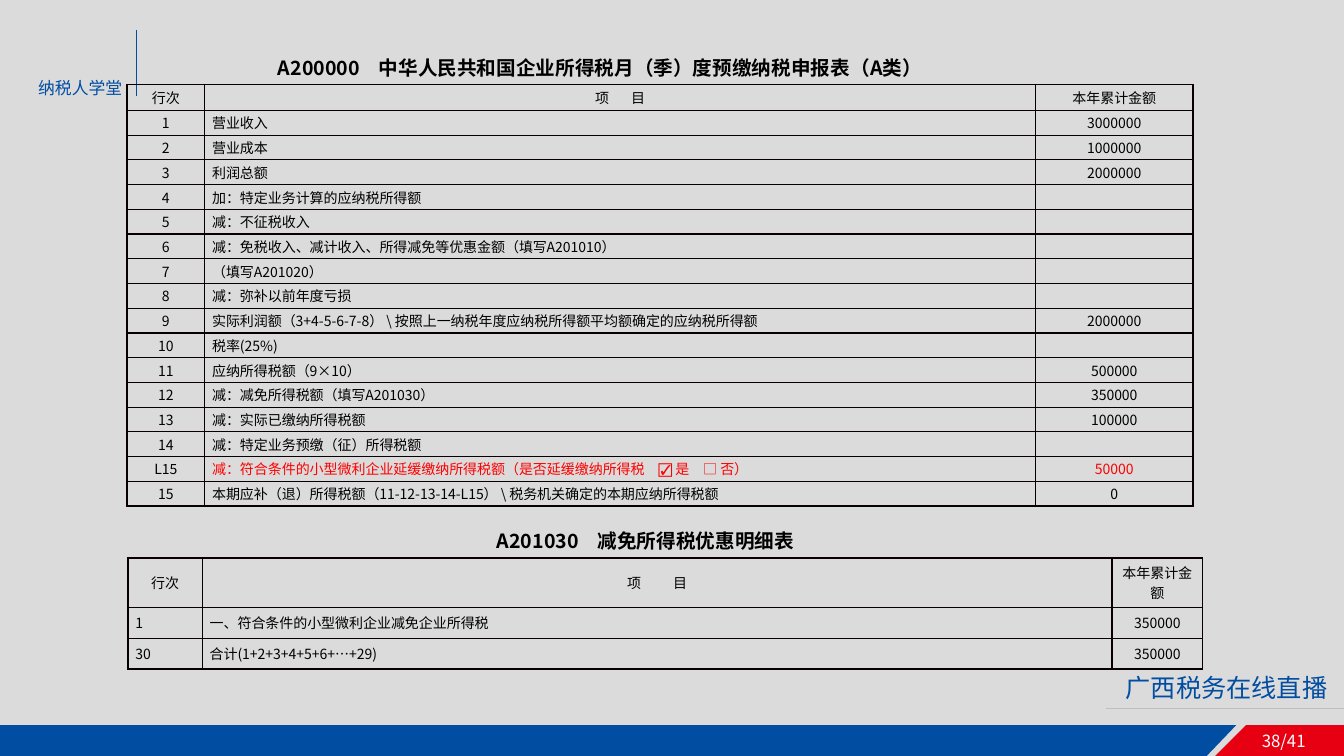
import pptx
import pptx.util
import pptx.dml.color
import pptx.enum.text
import lxml.etree

Pt = pptx.util.Pt
FONT = "Noto Sans CJK SC"
NS = "http://schemas.openxmlformats.org/drawingml/2006/main"
COLORS = {"bg": "DBDBDB", "blue": "004DA1", "red": "E60012", "white": "FFFFFF",
          "rule": "BFBFBF", "black": "000000", "border": "080000", "alert": "FF0000"}
RETURN_ROWS = [
    ("1", "营业收入", "3000000"),
    ("2", "营业成本", "1000000"),
    ("3", "利润总额", "2000000"),
    ("4", "加：特定业务计算的应纳税所得额", ""),
    ("5", "减：不征税收入", ""),
    ("6", "减：免税收入、减计收入、所得减免等优惠金额（填写A201010）", ""),
    ("7", "（填写A201020）", ""),
    ("8", "减：弥补以前年度亏损", ""),
    ("9", "实际利润额（3+4-5-6-7-8） \\ 按照上一纳税年度应纳税所得额平均额确定的应纳税所得额", "2000000"),
    ("10", "税率(25%)", ""),
    ("11", "应纳所得税额（9×10）", "500000"),
    ("12", "减：减免所得税额（填写A201030）", "350000"),
    ("13", "减：实际已缴纳所得税额", "100000"),
    ("14", "减：特定业务预缴（征）所得税额", ""),
    ("L15", [("减：符合条件的小型微利企业延缓缴纳所得税额（是否延缓缴纳所得税　", FONT),
             ("☑", "Arial"), (" 是　□ 否）", FONT)], "50000"),
    ("15", "本期应补（退）所得税额（11-12-13-14-L15） \\ 税务机关确定的本期应纳所得税额", "0"),
]
RELIEF_ROWS = [
    ("1", "一、符合条件的小型微利企业减免企业所得税", "350000"),
    ("30", "合计(1+2+3+4+5+6+…+29)", "350000"),
]


def rgb(name):
    """Return the named colour."""
    return pptx.dml.color.RGBColor.from_string(COLORS[name])


def add_run(p, text, size, color, bold=False, font=FONT, spacing=0):
    """Add one formatted run to a paragraph."""
    r = p.add_run()
    r.text = text
    r.font.size = Pt(size)
    r.font.bold = bold
    r.font.name = font
    r.font.color.rgb = rgb(color)
    rPr = r._r.get_or_add_rPr()
    lxml.etree.SubElement(rPr, f"{{{NS}}}ea", typeface=font)
    if spacing:
        rPr.set("spc", str(round(spacing * 100)))


def add_text(s, x, y, w, h, text, size, color, bold=False):
    """Add a one-line text box."""
    tf = s.shapes.add_textbox(Pt(x), Pt(y), Pt(w), Pt(h)).text_frame
    tf.word_wrap = True
    add_run(tf.paragraphs[0], text, size, color, bold)


def add_band(s, points, color):
    """Add a filled outline through the points."""
    fb = s.shapes.build_freeform(*points[0], scale=Pt(1))
    fb.add_line_segments(points[1:], close=True)
    sp = fb.convert_to_shape()
    sp.shadow.inherit = False
    sp.fill.solid()
    sp.fill.fore_color.rgb = rgb(color)
    sp.line.fill.background()


def add_line(s, x1, y1, x2, y2, color):
    """Add a thin straight line."""
    cx = s.shapes.add_connector(1, Pt(x1), Pt(y1), Pt(x2), Pt(y2))
    cx.line.color.rgb = rgb(color)
    cx.line.width = Pt(0.5)
    lxml.etree.SubElement(cx._element.spPr, f"{{{NS}}}effectLst")


def set_borders(cell, widths):
    """Draw the left, right, top and bottom borders of a cell."""
    tcPr = cell._tc.get_or_add_tcPr()
    for i, (side, width) in enumerate(zip("LRTB", widths)):
        ln = lxml.etree.Element(f"{{{NS}}}ln{side}", w=str(Pt(width)))
        fill = lxml.etree.SubElement(ln, f"{{{NS}}}solidFill")
        lxml.etree.SubElement(fill, f"{{{NS}}}srgbClr", val=COLORS["border"])
        tcPr.insert(i, ln)


def fill_cell(cell, content, centered, color):
    """Write a cell's text, given as a string or as text and font pairs."""
    cell.margin_left = cell.margin_right = Pt(5.4)
    cell.margin_top = cell.margin_bottom = Pt(0)
    cell.vertical_anchor = pptx.enum.text.MSO_ANCHOR.MIDDLE
    cell.fill.background()
    p = cell.text_frame.paragraphs[0]
    if centered:
        p.alignment = pptx.enum.text.PP_ALIGN.CENTER
    if not content:
        p._p.get_or_add_endParaRPr().set("sz", "1000")
        return
    pairs = [(content, FONT)] if isinstance(content, str) else content
    for text, font in pairs:
        add_run(p, text, 10, color, font=font)


def add_form(s, x, y, widths, heights, rows, gap, top, center_first):
    """Add a tax form table with a heavier outer frame."""
    rows = [("行次", "", "本年累计金额")] + rows
    table = s.shapes.add_table(len(rows), 3, Pt(x), Pt(y), Pt(sum(widths)), Pt(sum(heights))).table
    table.first_row = table.horz_banding = False
    for col, width in zip(table.columns, widths):
        col.width = Pt(width)
    for i, row in enumerate(rows):
        table.rows[i].height = Pt(heights[i])
        for j, content in enumerate(row):
            cell = table.cell(i, j)
            color = "alert" if row[0] == "L15" and j else "black"
            fill_cell(cell, content, i == 0 or j == 2 or (j == 0 and center_first), color)
            set_borders(cell, (1.5 if j == 0 else 1, 1.5 if j == 2 else 1,
                               top if i == 0 else 1, 1.5 if i == len(rows) - 1 else 1))
    p = table.cell(0, 1).text_frame.paragraphs[0]
    add_run(p, "项 ", 10, "black", spacing=gap)
    add_run(p, "目", 10, "black")


def main():
    """Build the slide and save it."""
    prs = pptx.Presentation()
    prs.slide_width, prs.slide_height = Pt(960), Pt(540)
    s = prs.slides.add_slide(prs.slide_layouts[6])
    s.background.fill.solid()
    s.background.fill.fore_color.rgb = rgb("bg")

    add_band(s, [(0, 518.4), (883.4, 518.4), (861.1, 541.4), (0, 541.4)], "blue")
    add_band(s, [(889.9, 518.4), (960, 518.4), (960, 541.4), (866.9, 541.4)], "red")
    add_text(s, 894.2, 518.4, 58.3, 28.8, "38/41", 12, "white")
    add_line(s, 97.2, 21.6, 97.2, 68.4, "blue")
    add_line(s, 790, 506.2, 962.6, 506.2, "rule")
    add_text(s, 20.2, 52.3, 77.8, 21.6, "纳税人学堂", 12, "blue")
    add_text(s, 797, 476.6, 186.5, 28.8, "广西税务在线直播", 18, "blue")

    add_text(s, 191.5, 36.7, 593.3, 24.5,
             "A200000\t中华人民共和国企业所得税月（季）度预缴纳税申报表（A类）", 14, "black", True)
    add_form(s, 90.7, 60.3, [55.4, 593.6, 112.4], [18.6] + [17.68] * 16,
             RETURN_ROWS, 6.75, 1, True)
    add_text(s, 347.8, 374.4, 254.2, 24.5, "A201030\t减免所得税优惠明细表", 14, "black", True)
    add_form(s, 91.4, 398.5, [53, 650, 64.6], [35.4, 22, 21.8],
             RELIEF_ROWS, 10.3, 1.5, False)
    prs.save("out.pptx")


if __name__ == "__main__":
    main()
